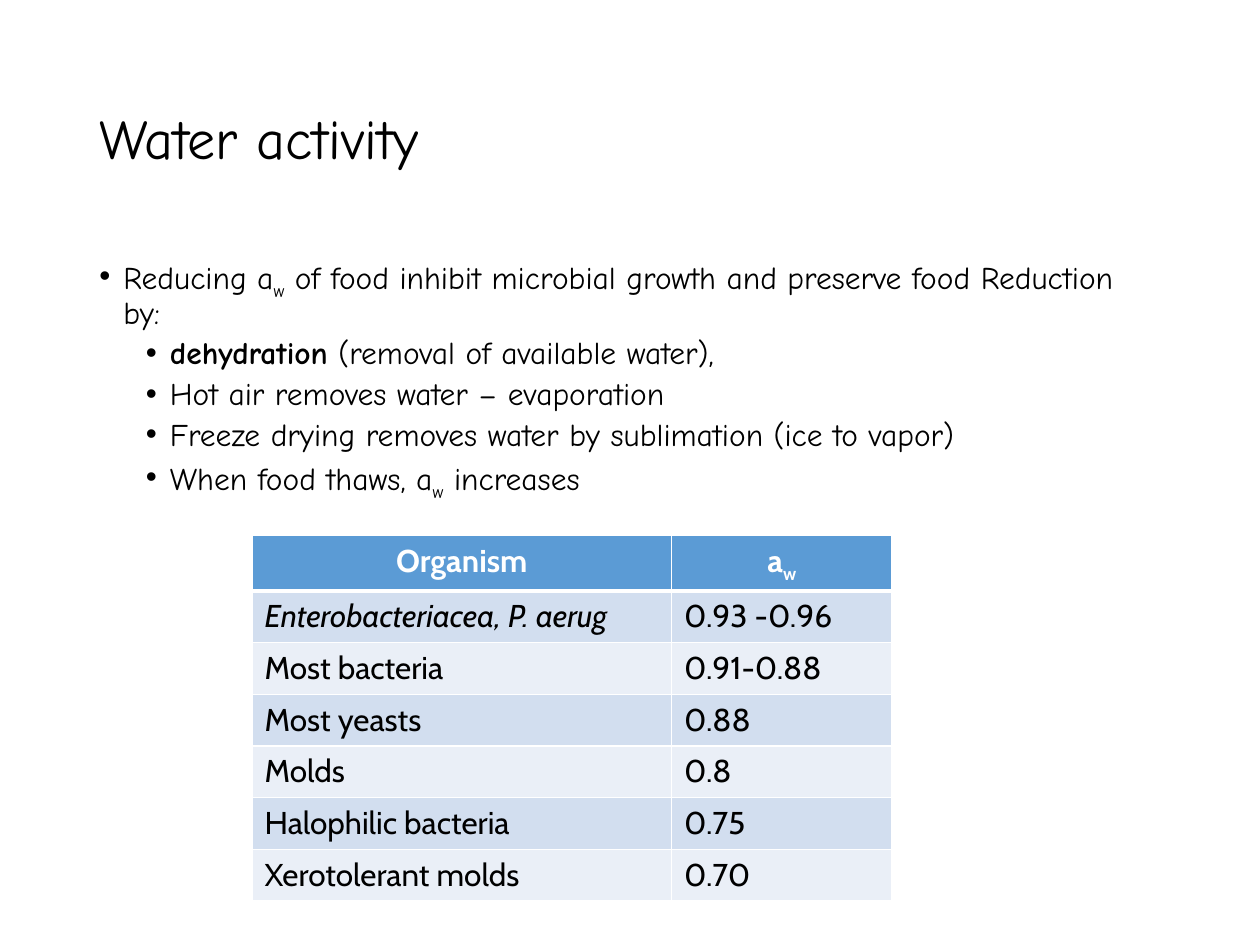
from lxml import etree
from pptx import Presentation
from pptx.dml.color import RGBColor
from pptx.enum.text import MSO_ANCHOR, PP_ALIGN
from pptx.oxml.ns import qn
from pptx.util import Inches, Pt

MIDDLE = MSO_ANCHOR.MIDDLE
CENTER = PP_ALIGN.CENTER
BLACK, WHITE, BLUE = "000000", "FFFFFF", "5B9BD5"
BANDS = ["D2DEEF", "EAEFF7"]


def color(value):
    return RGBColor.from_string(value)


def add_runs(p, runs, font, size, fill=BLACK):
    """Add (text, style) runs; style is "", "bold", "italic" or "sub"."""
    for text, style in runs:
        r = p.add_run()
        r.text = text
        r.font.name = font
        r.font.size = Pt(size)
        r.font.color.rgb = color(fill)
        r.font.bold = style == "bold" or fill == WHITE
        r.font.italic = style == "italic"
        if style == "sub":
            r.font._element.set("baseline", "-25000")


prs = Presentation()
prs.slide_width, prs.slide_height = Inches(10), Inches(7.5)
s = prs.slides.add_slide(prs.slide_layouts[6])

# Title
title = s.shapes.add_textbox(Inches(0.69), Inches(0.4), Inches(8.62), Inches(1.45))
tf = title.text_frame
tf.word_wrap = True
tf.vertical_anchor = MIDDLE
tf.paragraphs[0].line_spacing = 0.9
add_runs(tf.paragraphs[0], [("Water activity", "")], "Comic Neue", 32)

# Bullets: level and runs
bullets = [
    (0, [("Reducing a", ""), ("w", "sub"),
         (" of food inhibit microbial growth and preserve food Reduction by:", "")]),
    (1, [("dehydration", "bold"), (" (removal of available water),", "")]),
    (1, [("Hot air removes water – evaporation", "")]),
    (1, [("Freeze drying removes water by sublimation (ice to vapor)", "")]),
    (1, [("When food thaws, a", ""), ("w", "sub"), (" increases", "")]),
]
body = s.shapes.add_textbox(Inches(0.69), Inches(2), Inches(8.25), Inches(2.25))
tf = body.text_frame
tf.word_wrap = True
for i, (level, runs) in enumerate(bullets):
    p = tf.paragraphs[0] if i == 0 else tf.add_paragraph()
    p.level = level
    p.line_spacing = 0.9
    p.space_before = Pt(3.8 if i else 0)
    pPr = p._p.get_or_add_pPr()
    pPr.set("marL", str(Inches(0.56 if level else 0.19)))
    pPr.set("indent", str(Inches(-0.19)))
    etree.SubElement(pPr, qn("a:buFont")).set("typeface", "Arial")
    etree.SubElement(pPr, qn("a:buChar")).set("char", "•")
    add_runs(p, runs, "Comic Neue", 18)

# Water activity table
rows = [
    ([("Organism", "")], [("a", ""), ("w", "sub")]),
    ([("Enterobacteriacea, P. aerug", "italic")], [("0.93 -0.96", "")]),
    ([("Most bacteria", "")], [("0.91-0.88", "")]),
    ([("Most yeasts", "")], [("0.88", "")]),
    ([("Molds", "")], [("0.8", "")]),
    ([("Halophilic bacteria", "")], [("0.75", "")]),
    ([("Xerotolerant molds", "")], [("0.70", "")]),
]
table = s.shapes.add_table(len(rows), 2, Inches(2), Inches(4.25),
                           Inches(5.08), Inches(0.41 * len(rows))).table
table.columns[0].width, table.columns[1].width = Inches(3.33), Inches(1.75)
for i, row in enumerate(rows):
    header = i == 0
    for j, runs in enumerate(row):
        cell = table.cell(i, j)
        p = cell.text_frame.paragraphs[0]
        if header:
            p.alignment = CENTER
        add_runs(p, runs, "Cabin", 18, WHITE if header else BLACK)

        # White borders, thick below the header; they precede the fill in the XML
        tcPr = cell._tc.get_or_add_tcPr()
        for side in ("L", "R", "T", "B"):
            thick = (header and side == "B") or (i == 1 and side == "T")
            ln = etree.SubElement(tcPr, qn("a:ln" + side), w=str(Pt(3 if thick else 1)))
            line_fill = etree.SubElement(ln, qn("a:solidFill"))
            etree.SubElement(line_fill, qn("a:srgbClr"), val=WHITE)
        cell.fill.solid()
        cell.fill.fore_color.rgb = color(BLUE if header else BANDS[(i - 1) % 2])

prs.save("out.pptx")
